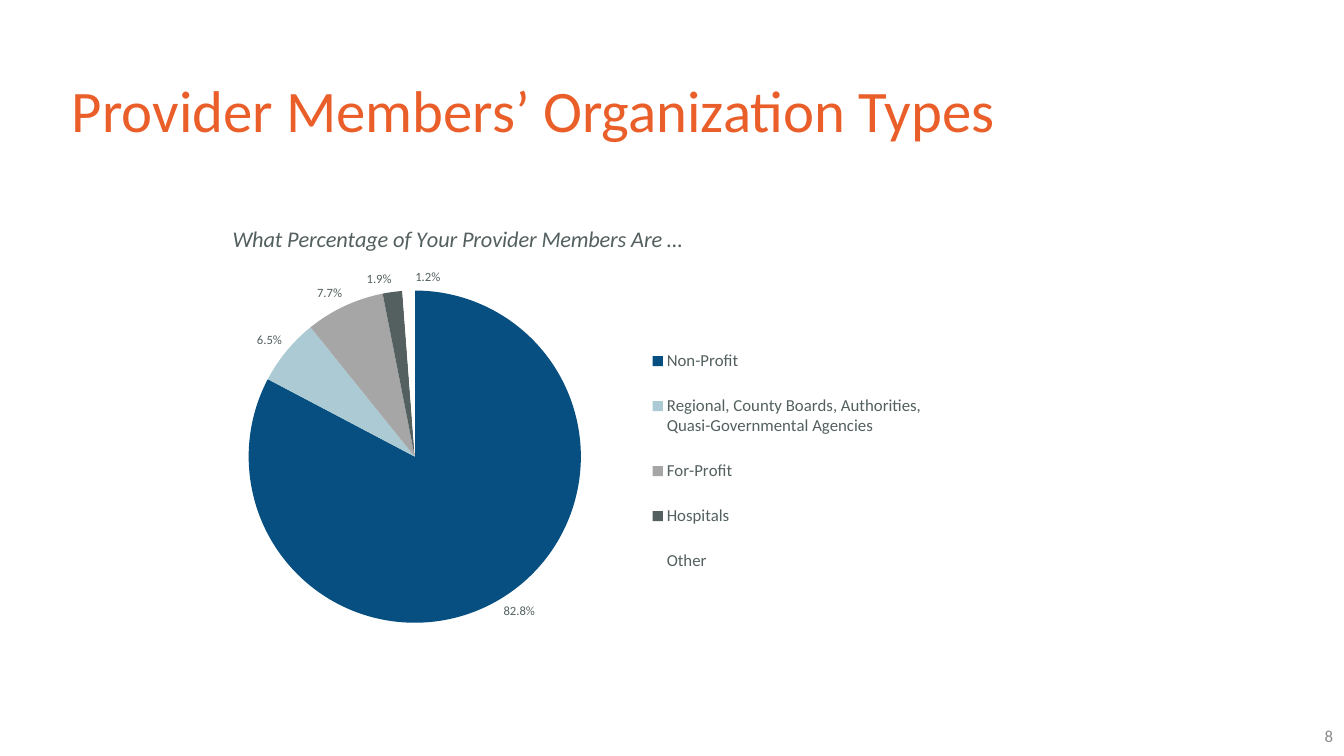
from lxml import etree
from pptx import Presentation
from pptx.chart.data import CategoryChartData
from pptx.dml.color import RGBColor
from pptx.enum.chart import XL_CHART_TYPE, XL_LABEL_POSITION, XL_LEGEND_POSITION
from pptx.enum.text import MSO_ANCHOR, PP_ALIGN
from pptx.oxml.ns import qn
from pptx.util import Emu, Pt

PIE = XL_CHART_TYPE.PIE
OUTSIDE = XL_LABEL_POSITION.OUTSIDE_END
LEGEND_RIGHT = XL_LEGEND_POSITION.RIGHT
MIDDLE = MSO_ANCHOR.MIDDLE
LEFT, RIGHT = PP_ALIGN.LEFT, PP_ALIGN.RIGHT

EMU_PER_PX = 914400 / 100.8
FONT = "Calibri"
PERCENT = "0.0%"
COLORS = {
    "orange": "EA5E29",
    "navy": "064F80",
    "sky": "ACCAD3",
    "gray": "A6A6A6",
    "slate": "53605F",
    "white": "FFFFFF",
    "page": "8C8C8C",
}
ORGANIZATIONS = [
    ("Non-Profit", 0.828, "navy"),
    ("Regional, County Boards, Authorities, Quasi-Governmental Agencies", 0.065, "sky"),
    ("For-Profit", 0.077, "gray"),
    ("Hospitals", 0.019, "slate"),
    ("Other", 0.012, "white"),
]


def px(length):
    return Emu(round(length * EMU_PER_PX))


def color(name):
    return RGBColor.from_string(COLORS[name])


def style_font(font, size, tint, italic=False):
    font.name = FONT
    font.size = Pt(size)
    font.bold = False
    font.italic = italic
    font.color.rgb = color(tint)


def write(frame, text, size, tint, italic=False, align=LEFT, spacing=1.0):
    paragraph = frame.paragraphs[0]
    paragraph.alignment = align
    paragraph.line_spacing = spacing
    run = paragraph.add_run()
    run.text = text
    style_font(run.font, size, tint, italic)


def place(element, index, modes=(), **fractions):
    for old in element.findall(qn("c:layout")):
        element.remove(old)
    layout = etree.Element(qn("c:layout"))
    manual = etree.SubElement(layout, qn("c:manualLayout"))
    for tag, value in [*modes, *fractions.items()]:
        etree.SubElement(manual, qn(f"c:{tag}")).set("val", str(value))
    element.insert(index, layout)


class Slide:
    edges = [("xMode", "edge"), ("yMode", "edge")]
    inner = [("layoutTarget", "inner"), *edges]

    def __init__(self, deck):
        self.slide = deck.slides.add_slide(deck.slide_layouts[6])

    def text(self, text, left, top, width, height, **style):
        box = self.slide.shapes.add_textbox(px(left), px(top), px(width), px(height))
        frame = box.text_frame
        frame.word_wrap = True
        frame.vertical_anchor = MIDDLE
        write(frame, text, **style)

    def pie(self, question, shares, left, top, width, height):
        data = CategoryChartData(number_format=PERCENT)
        data.categories = [label for label, _, _ in shares]
        data.add_series("Series 1", [share for _, share, _ in shares])
        chart = self.slide.shapes.add_chart(
            PIE, px(left), px(top), px(width), px(height), data
        ).chart
        style_font(chart.font, 10, "slate")

        chart.has_title = True
        write(chart.chart_title.text_frame, question, 16, "slate", italic=True)
        place(chart.chart_title._element, 1, self.edges, x=0.17, y=0.04)

        chart.has_legend = True
        legend = chart.legend
        legend.position = LEGEND_RIGHT
        legend.include_in_layout = False
        style_font(legend.font, 12, "slate")
        place(legend._element, 1, self.edges, x=0.59, y=0.28, w=0.3, h=0.61)

        place(chart._chartSpace.chart.plotArea, 0, self.inner, x=0.19, y=0.2, w=0.34, h=0.75)
        self.slices(chart.plots[0].series[0], shares)

    def slices(self, series, shares):
        for index, (_, _, tint) in enumerate(shares):
            wedge = series.points[index].format
            wedge.fill.solid()
            wedge.fill.fore_color.rgb = color(tint)
            wedge.line.fill.background()

        labels = series.data_labels
        labels.show_value = True
        labels.show_percentage = False
        labels.show_category_name = False
        labels.show_leader_lines = False
        labels.number_format = PERCENT
        labels.number_format_is_linked = False
        labels.position = OUTSIDE
        style_font(labels.font, 9, "slate")

        other = series.points[len(shares) - 1].data_label
        style_font(other.font, 9, "slate")
        other.position = OUTSIDE
        other_label = labels._element.find(qn("c:dLbl"))
        place(other_label, 1, x=0.02, y=0)
        number = etree.Element(qn("c:numFmt"), formatCode=PERCENT, sourceLinked="0")
        other_label.insert(2, number)


def main():
    deck = Presentation()
    deck.slide_width, deck.slide_height = px(1344), px(756)
    slide = Slide(deck)
    slide.text(
        "Provider Members’ Organization Types", 62, 40, 1220, 146,
        size=42, tint="orange", spacing=0.9,
    )
    slide.text("8", 1041, 716, 302, 40, size=12, tint="page", align=RIGHT)
    slide.pie(
        "What Percentage of Your Provider Members Are …", ORGANIZATIONS, 62, 202, 980, 443
    )
    deck.save("out.pptx")


if __name__ == "__main__":
    main()
